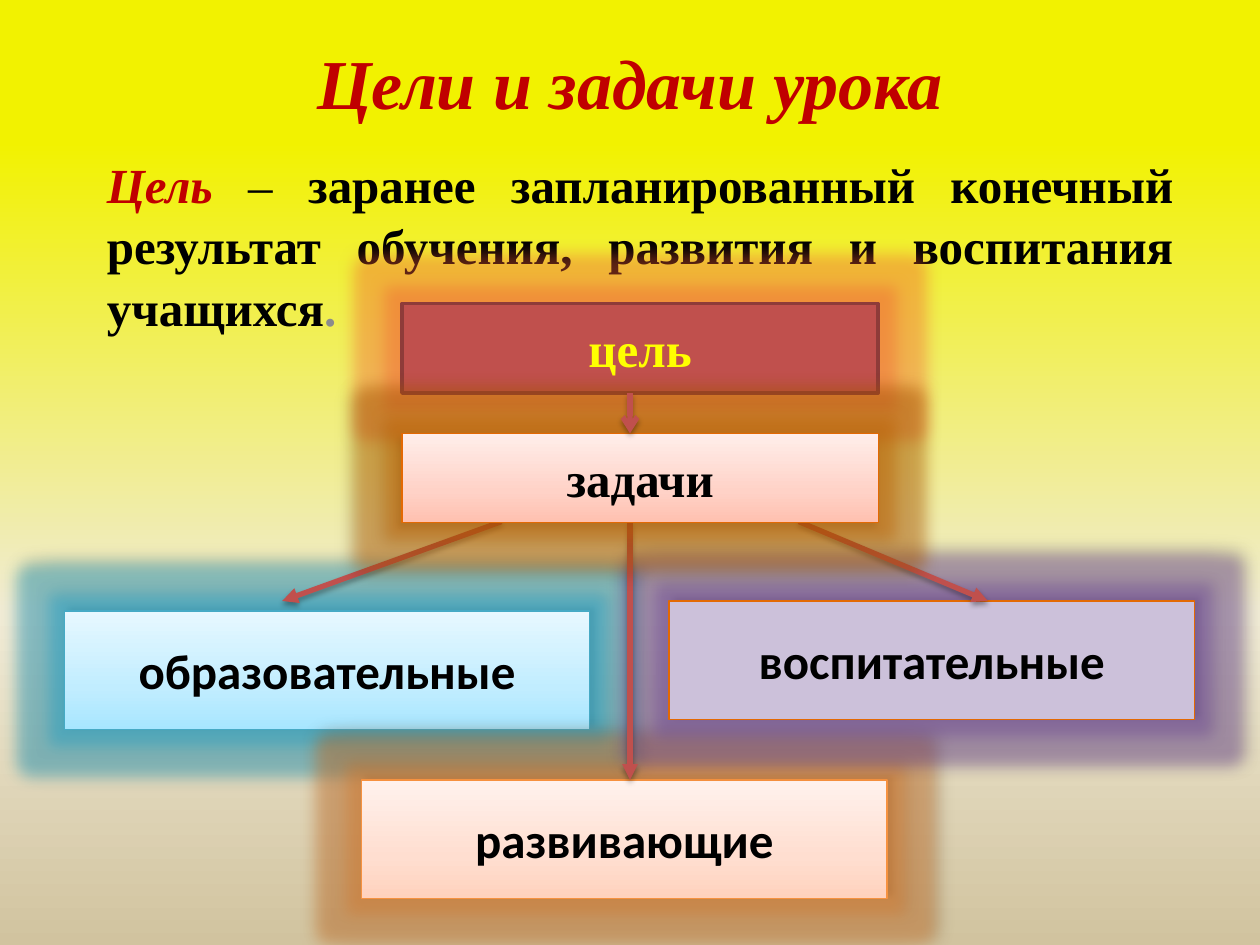
from lxml.etree import SubElement
from pptx import Presentation
from pptx.dml.color import RGBColor
from pptx.enum.shapes import MSO_CONNECTOR as CONN, MSO_SHAPE as SHAPE
from pptx.enum.text import MSO_ANCHOR as ANCHOR, PP_ALIGN as ALIGN
from pptx.oxml.ns import qn
from pptx.util import Inches, Pt

DARK_RED = RGBColor(0xC0, 0x00, 0x00)
BRICK = RGBColor(0xC0, 0x50, 0x4D)
BRICK_EDGE = RGBColor(0x8E, 0x3B, 0x39)
YELLOW = RGBColor(0xFF, 0xFF, 0x00)
BLACK = RGBColor(0x00, 0x00, 0x00)
GRAY = RGBColor(0x8C, 0x8C, 0x8C)
BLUE_EDGE = RGBColor(0x46, 0xAA, 0xC5)
ORANGE_EDGE = RGBColor(0xF6, 0x92, 0x40)
RUST_EDGE = RGBColor(0xE3, 0x69, 0x03)
LILAC = RGBColor(0xCC, 0xC1, 0xDA)
ORANGE_GLOW = RGBColor(0xF0, 0x5A, 0x32)
RUST_GLOW = RGBColor(0xC8, 0x64, 0x00)
BLUE_GLOW = RGBColor(0x20, 0xA8, 0xD0)
PEACH_GLOW = RGBColor(0xE0, 0x80, 0x30)
PURPLE_GLOW = RGBColor(0x70, 0x48, 0x9E)

SERIF, SANS = "Times New Roman", "Calibri"
BACKGROUND = [(15, "F2F200"), (65, "F0EBD5"), (100, "D1C39F")]
BLUE = [(0, "A7E6FF"), (35, "C1EDFF"), (100, "E7F8FF")]
PEACH = [(0, "FFD2BD"), (35, "FFDED0"), (100, "FFF2ED")]
ROSE = [(0, "FFC0AF"), (35, "FFD2C7"), (100, "FFEEEA")]

TITLE = "Цели и задачи урока"
DEFINITION = [
    ("Цель", dict(color=DARK_RED, bold=True, italic=True)),
    (" – ", {}),
    ("заранее запланированный конечный результат обучения, "
     "развития и воспитания учащихся", dict(bold=True)),
    (".", dict(color=GRAY, bold=True)),
]

# Shadows: opacity %, blur pt, distance pt, direction in degrees
UP_RIGHT, DOWN_LEFT = (40, 4, 3, 315), (40, 4, 3, 135)
BELOW = (35, 3.1, 1.8, 90)

# Boxes: text, left, top, size, fill, edge, edge width, glow, shadow, font, text colour
WIDE, LARGE = (3.78, 0.71), (4.17, 0.94)
GOAL = ("цель", 3.19, 2.41, WIDE, BRICK, BRICK_EDGE, 2, ORANGE_GLOW, None, SERIF, YELLOW)
KINDS = [
    ("образовательные", 0.51, 4.85, LARGE, BLUE, BLUE_EDGE, 0.75, BLUE_GLOW, UP_RIGHT, SANS, BLACK),
    ("развивающие", 2.87, 6.19, LARGE, PEACH, ORANGE_EDGE, 0.75, PEACH_GLOW, UP_RIGHT, SANS, BLACK),
    ("воспитательные", 5.31, 4.77, LARGE, LILAC, RUST_EDGE, 0.75, PURPLE_GLOW, UP_RIGHT, SANS, BLACK),
]
TASKS = ("задачи", 3.19, 3.44, WIDE, ROSE, RUST_EDGE, 0.75, RUST_GLOW, DOWN_LEFT, SERIF, BLACK)

# Arrows: x1, y1, x2, y2
TASK_ARROWS = [(5, 4.14, 5, 6.19), (3.98, 4.14, 2.24, 4.77), (6.34, 4.14, 7.84, 4.77)]
GOAL_ARROW = (5, 3.12, 5, 3.44)


def add_run(p, text, size=28, font=SERIF, color=BLACK, bold=False, italic=False):
    r = p.add_run()
    r.text = text
    r.font.size, r.font.name = Pt(size), font
    r.font.bold, r.font.italic = bold, italic
    r.font.color.rgb = color


def set_gradient(fill, parent, stops, angle):
    fill.gradient()
    fill.gradient_angle = angle
    stop_list = parent.find(".//" + qn("a:gsLst"))
    for old in list(stop_list):
        stop_list.remove(old)
    for pos, color in stops:
        gs = SubElement(stop_list, qn("a:gs"), pos=str(pos * 1000))
        SubElement(gs, qn("a:srgbClr"), val=color)


def add_effects(shape, glow=None, shadow=None):
    effects = SubElement(shape._element.spPr, qn("a:effectLst"))
    if glow is not None:
        el = SubElement(effects, qn("a:glow"), rad=str(Pt(18)))
        clr = SubElement(el, qn("a:srgbClr"), val=str(glow))
        SubElement(clr, qn("a:alpha"), val="40000")
    if shadow:
        alpha, blur, dist, angle = shadow
        el = SubElement(effects, qn("a:outerShdw"), blurRad=str(Pt(blur)),
                        dist=str(Pt(dist)), dir=str(angle * 60000), rotWithShape="0")
        clr = SubElement(el, qn("a:srgbClr"), val="000000")
        SubElement(clr, qn("a:alpha"), val=str(alpha * 1000))


def add_text(s, left, top, width, height, runs, align, anchor):
    tf = s.shapes.add_textbox(*map(Inches, (left, top, width, height))).text_frame
    tf.word_wrap = True
    tf.vertical_anchor = anchor
    p = tf.paragraphs[0]
    p.alignment = align
    for text, fmt in runs:
        add_run(p, text, **fmt)
    return p


def add_box(s, text, left, top, size, fill, edge, edge_width, glow, shadow, font, color):
    sp = s.shapes.add_shape(SHAPE.RECTANGLE, *map(Inches, (left, top, *size)))
    if isinstance(fill, list):
        set_gradient(sp.fill, sp._element.spPr, fill, 90)
    else:
        sp.fill.solid()
        sp.fill.fore_color.rgb = fill
    sp.line.color.rgb = edge
    sp.line.width = Pt(edge_width)
    add_effects(sp, glow, shadow)
    tf = sp.text_frame
    tf.word_wrap = False
    tf.vertical_anchor = ANCHOR.MIDDLE
    p = tf.paragraphs[0]
    p.alignment = ALIGN.CENTER
    add_run(p, text, font=font, color=color, bold=True)


def add_arrow(s, points, head="triangle"):
    line = s.shapes.add_connector(CONN.STRAIGHT, *map(Inches, points))
    line.line.color.rgb = BRICK
    line.line.width = Pt(3)
    SubElement(line.line._get_or_add_ln(), qn("a:tailEnd"), type=head)
    add_effects(line, shadow=BELOW)


def main():
    prs = Presentation()
    prs.slide_width, prs.slide_height = Inches(10), Inches(7.5)
    s = prs.slides.add_slide(prs.slide_layouts[6])
    set_gradient(s.background.fill, s._element, BACKGROUND, 270)

    # Title and definition
    title = [(TITLE, dict(size=40, color=DARK_RED, bold=True, italic=True))]
    add_text(s, 0.75, 0.21, 8.5, 0.87, title, ALIGN.CENTER, ANCHOR.MIDDLE)
    p = add_text(s, 0.75, 1.15, 8.66, 1.89, DEFINITION, ALIGN.JUSTIFY, ANCHOR.TOP)
    p.space_before = Pt(2)
    p.line_spacing = 1.05

    # Goal, kinds of tasks, and the arrows that run from behind the tasks box
    for box in (GOAL, *KINDS):
        add_box(s, *box)
    for points in TASK_ARROWS:
        add_arrow(s, points)
    add_box(s, *TASKS)
    add_arrow(s, GOAL_ARROW, head="arrow")

    prs.save("out.pptx")


if __name__ == "__main__":
    main()
